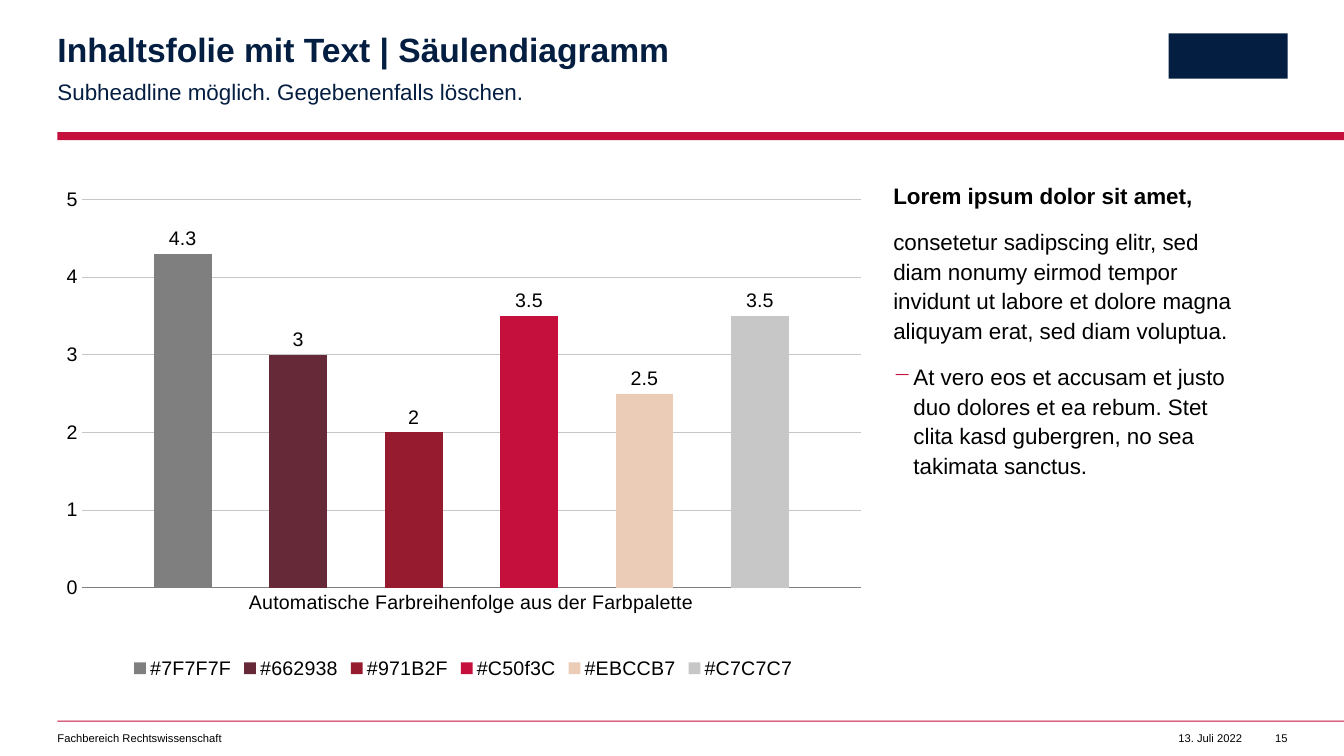
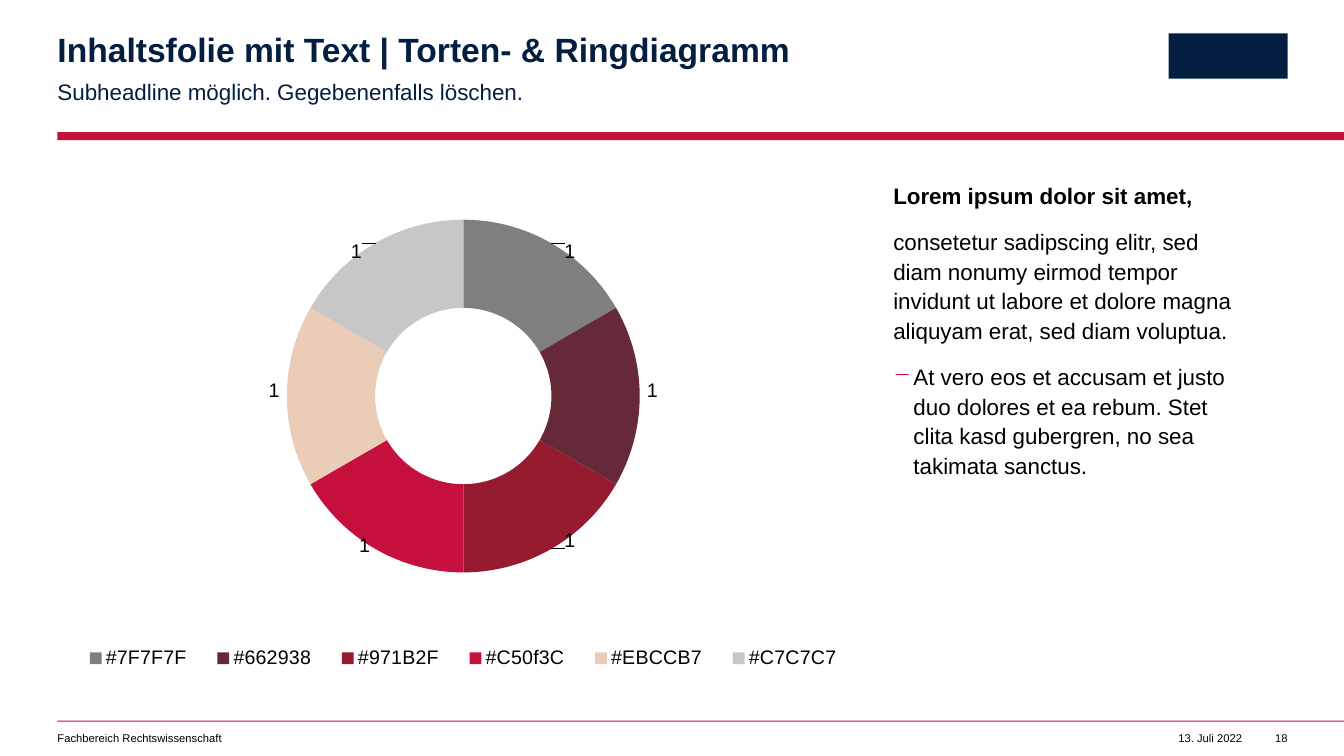
"""Build two content slides: a column chart and a doughnut chart beside text."""
import copy

import pptx
import pptx.chart.data
import pptx.dml.color
import pptx.enum.chart
import pptx.enum.shapes
import pptx.enum.text
import pptx.oxml
import pptx.oxml.ns
import pptx.util

Inches = pptx.util.Inches
Pt = pptx.util.Pt
Align = pptx.enum.text.PP_ALIGN
ChartType = pptx.enum.chart.XL_CHART_TYPE
qn = pptx.oxml.ns.qn


class Theme:
    font = "Arial"
    navy, red, black = "041E42", "C50F3C", "000000"
    axis, grid = "7F7F7F", "C7C7C7"
    title, text, chart, footer = 24, 16, 14, 8
    width, height, left, right = 13.33, 7.5, 0.57, 12.77


PALETTE = ["#7F7F7F", "#662938", "#971B2F", "#C50f3C", "#EBCCB7", "#C7C7C7"]
SUBTITLE = "Subheadline möglich. Gegebenenfalls löschen."
DEPARTMENT = "Fachbereich Rechtswissenschaft"
DATE = "13. Juli 2022"
BODY = [
    {"text": "Lorem ipsum dolor sit amet,", "bold": True},
    {"text": "consetetur sadipscing elitr, sed diam nonumy eirmod tempor invidunt "
             "ut labore et dolore magna aliquyam erat, sed diam voluptua."},
    {"text": "At vero eos et accusam et justo duo dolores et ea rebum. Stet clita "
             "kasd gubergren, no sea takimata sanctus.", "bullet": "−"},
]
SLIDES = [
    {"title": "Inhaltsfolie mit Text | Säulendiagramm", "number": "15",
     "type": ChartType.COLUMN_CLUSTERED,
     "categories": ["Automatische Farbreihenfolge aus der Farbpalette"],
     "series": [(name, [value]) for name, value
                in zip(PALETTE, [4.3, 3, 2, 3.5, 2.5, 3.5])],
     "plot": {"x": 0.03, "y": 0.04, "w": 0.96, "h": 0.77}},
    {"title": "Inhaltsfolie mit Text | Torten- & Ringdiagramm", "number": "18",
     "type": ChartType.DOUGHNUT, "categories": PALETTE,
     "series": [("Series 1", [1] * len(PALETTE))],
     "plot": {"x": 0.21, "y": 0.08, "w": 0.58, "h": 0.7},
     "legend": {"x": 0.01, "y": 0.9, "w": 0.98, "h": 0.1},
     "label_shifts": [(0.05, -0.06), (0.07, -0.01), (0.05, 0.06),
                      (-0.04, 0.07), (-0.07, -0.01), (-0.05, -0.06)]},
]
CHART_AREA = (Theme.left, 1.78, 8.05, 5)
BODY_AREA = (8.86, 1.78, 3.91, 5)
BANDS = [
    (Theme.left, 1.31, Theme.width - Theme.left, 0.08, Theme.red),
    (Theme.left, 7.15, Theme.width - Theme.left, 0.01, Theme.red),
    (11.59, 0.33, 1.18, 0.45, Theme.navy),
]


def assign(target, **values):
    for name, value in values.items():
        setattr(target, name, value)


def rgb(color):
    return pptx.dml.color.RGBColor.from_string(color.lstrip("#").upper())


def paint(fill, color):
    fill.solid()
    fill.fore_color.rgb = rgb(color)


def set_font(font, size, color=Theme.black, bold=False):
    assign(font, name=Theme.font, size=Pt(size), bold=bold)
    font.color.rgb = rgb(color)


def set_line(line, color):
    line.width = Pt(0.5)
    paint(line.fill, color)


def add_bullet(para, symbol):
    properties = para._p.get_or_add_pPr()
    properties.set("marL", str(Inches(0.2)))
    properties.set("indent", str(-Inches(0.2)))
    space = pptx.oxml.ns.nsdecls("a")
    properties.append(pptx.oxml.parse_xml(
        f'<a:buClr {space}><a:srgbClr val="{Theme.red}"/></a:buClr>'))
    properties.append(pptx.oxml.parse_xml(f'<a:buChar {space} char="{symbol}"/>'))


def add_text(page, area, items, size, color=Theme.black, inset=0,
             spacing=1.0, after=0, align=Align.LEFT):
    frame = page.shapes.add_textbox(*map(Inches, area)).text_frame
    assign(frame, word_wrap=True, margin_left=0, margin_top=0,
           margin_right=Inches(inset), margin_bottom=0)
    for index, item in enumerate(items):
        para = frame.add_paragraph() if index else frame.paragraphs[0]
        assign(para, alignment=align, line_spacing=spacing, space_after=Pt(after))
        span = para.add_run()
        span.text = item["text"]
        set_font(span.font, size, color, item.get("bold", False))
        if "bullet" in item:
            add_bullet(para, item["bullet"])


def add_frame(page, content):
    for *area, color in BANDS:
        band = page.shapes.add_shape(
            pptx.enum.shapes.MSO_SHAPE.RECTANGLE, *map(Inches, area))
        band.shadow.inherit = False
        paint(band.fill, color)
        band.line.fill.background()
    add_text(page, (Theme.left, 0.33, 7.49, 0.36),
             [{"text": content["title"], "bold": True}],
             Theme.title, Theme.navy, spacing=0.9)
    add_text(page, (Theme.left, 0.75, 7.49, 0.27), [{"text": SUBTITLE}],
             Theme.text, Theme.navy, inset=0.39, spacing=1.1, after=12)
    for left, width, text, align in [
            (Theme.left, 5.98, DEPARTMENT, Align.LEFT),
            (11.39, 0.93, DATE, Align.RIGHT),
            (12.56, 0.21, content["number"], Align.RIGHT)]:
        add_text(page, (left, 7.26, width, 0.13), [{"text": text}],
                 Theme.footer, align=align)


def layout_xml(values, inner=False, modes=True):
    target = '<c:layoutTarget val="inner"/>' if inner else ""
    mode = '<c:xMode val="edge"/><c:yMode val="edge"/>' if modes else ""
    sizes = "".join(f'<c:{key} val="{value}"/>' for key, value in values.items())
    return pptx.oxml.parse_xml(
        f'<c:layout {pptx.oxml.ns.nsdecls("c")}><c:manualLayout>'
        f'{target}{mode}{sizes}</c:manualLayout></c:layout>')


def place(parent, index, layout):
    for old in parent.findall(qn("c:layout")):
        parent.remove(old)
    parent.insert(index, layout)


def shift_labels(labels, shifts):
    root = labels._element
    flags = "".join(
        f'<c:show{name} val="{int(name == "Val")}"/>' for name in
        ("LegendKey", "Val", "CatName", "SerName", "Percent", "BubbleSize"))
    for index, (x, y) in enumerate(shifts):
        label = pptx.oxml.parse_xml(
            f'<c:dLbl {pptx.oxml.ns.nsdecls("c")}><c:idx val="{index}"/>{flags}</c:dLbl>')
        label.insert(1, layout_xml({"x": x, "y": y}, modes=False))
        label.insert(2, copy.deepcopy(root.find(qn("c:txPr"))))
        root.insert(index, label)


def style_columns(chart):
    plot = chart.plots[0]
    assign(plot, gap_width=250, overlap=-100, vary_by_categories=False)
    for series in plot.series:
        paint(series.format.fill, series.name)
        series.data_labels.position = pptx.enum.chart.XL_LABEL_POSITION.OUTSIDE_END
    none = pptx.enum.chart.XL_TICK_MARK.NONE
    for axis in (chart.category_axis, chart.value_axis):
        assign(axis, major_tick_mark=none, minor_tick_mark=none)
        set_font(axis.tick_labels.font, Theme.chart)
    set_line(chart.category_axis.format.line, Theme.axis)
    assign(chart.value_axis, minimum_scale=0, maximum_scale=5, major_unit=1)
    chart.value_axis.format.line.fill.background()
    set_line(chart.value_axis.major_gridlines.format.line, Theme.grid)


def style_ring(chart, shifts):
    series = chart.plots[0].series[0]
    for index, color in enumerate(PALETTE):
        paint(series.points[index].format.fill, color)
    shift_labels(series.data_labels, shifts)
    for hole in chart._chartSpace.iter(qn("c:holeSize")):
        hole.set("val", "80")


def add_chart(page, content):
    data = pptx.chart.data.CategoryChartData()
    data.categories = content["categories"]
    for name, values in content["series"]:
        data.add_series(name, values)
    chart = page.shapes.add_chart(
        content["type"], *map(Inches, CHART_AREA), data).chart
    assign(chart, has_title=False, has_legend=True)
    set_font(chart.font, Theme.chart)
    assign(chart.legend, include_in_layout=False,
           position=pptx.enum.chart.XL_LEGEND_POSITION.BOTTOM)
    set_font(chart.legend.font, Theme.chart)
    for series in chart.plots[0].series:
        series.data_labels.show_value = True
        set_font(series.data_labels.font, Theme.chart)
    if content["type"] == ChartType.DOUGHNUT:
        style_ring(chart, content["label_shifts"])
    else:
        style_columns(chart)
    area = chart._chartSpace.find(".//" + qn("c:plotArea"))
    place(area, 0, layout_xml(content["plot"], inner=True))
    if "legend" in content:
        place(chart.legend._element, 1, layout_xml(content["legend"]))


def main():
    deck = pptx.Presentation()
    assign(deck, slide_width=Inches(Theme.width), slide_height=Inches(Theme.height))
    for content in SLIDES:
        page = deck.slides.add_slide(deck.slide_layouts[6])
        add_frame(page, content)
        add_chart(page, content)
        add_text(page, BODY_AREA, BODY, Theme.text, inset=0.39, spacing=1.1, after=12)
    deck.save("out.pptx")


if __name__ == "__main__":
    main()
